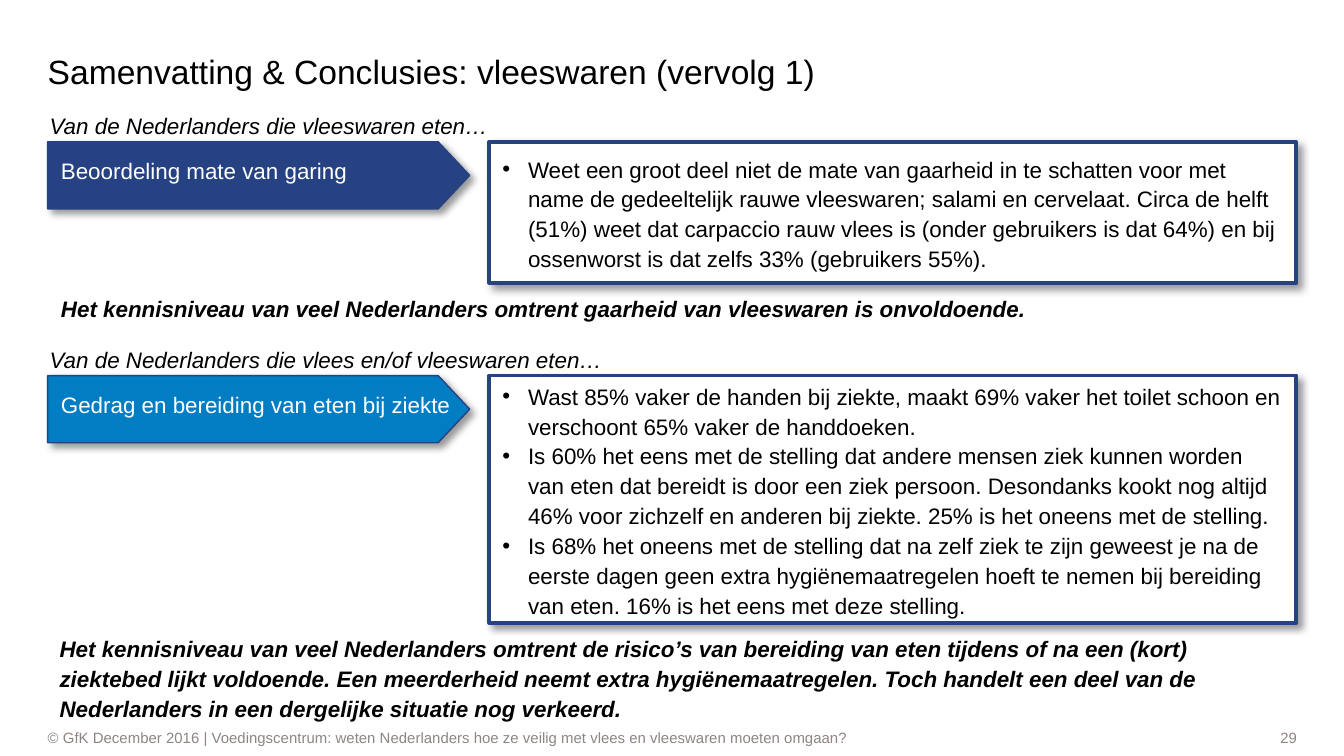
from lxml import etree
from pptx import Presentation
from pptx.dml.color import RGBColor
from pptx.enum.shapes import MSO_SHAPE
from pptx.enum.text import MSO_ANCHOR, PP_ALIGN
from pptx.oxml.ns import qn
from pptx.util import Pt

PX = 4572
RECT = MSO_SHAPE.RECTANGLE
TOP, MIDDLE = MSO_ANCHOR.TOP, MSO_ANCHOR.MIDDLE
LEFT, RIGHT = PP_ALIGN.LEFT, PP_ALIGN.RIGHT
COLORS = {"navy": "264283", "blue": "007DC3", "white": "FFFFFF",
          "black": "000000", "grey": "8E8581"}


def write(sp, *texts, size=12, color="black", bold=False, italic=False, align=LEFT,
          anchor=TOP, insets=(0, 0, 0, 0), spacing=None, bullet=False):
    tf = sp.text_frame
    tf.word_wrap = True
    tf.vertical_anchor = anchor
    tf.margin_left, tf.margin_top, tf.margin_right, tf.margin_bottom = [v * PX for v in insets]
    for i, text in enumerate(texts):
        p = tf.paragraphs[0] if i == 0 else tf.add_paragraph()
        p.alignment = align
        if spacing:
            p.line_spacing = Pt(spacing)
        if bullet:
            pPr = p._p.get_or_add_pPr()
            pPr.set("marL", str(38 * PX))
            pPr.set("indent", str(-38 * PX))
            etree.SubElement(pPr, qn("a:buFont")).set("typeface", "Arial")
            etree.SubElement(pPr, qn("a:buChar")).set("char", "•")
        r = p.add_run()
        r.text = text
        r.font.name = "Arial"
        r.font.size = Pt(size)
        r.font.bold = bold
        r.font.italic = italic
        r.font.color.rgb = RGBColor.from_string(COLORS[color])


def style(sp, fill, width):
    sp.fill.solid()
    sp.fill.fore_color.rgb = RGBColor.from_string(COLORS[fill])
    sp.line.color.rgb = RGBColor.from_string(COLORS["navy"])
    sp.line.width = Pt(width)
    sp.shadow.inherit = False
    effects = sp._element.spPr.find(qn("a:effectLst"))
    shadow = etree.SubElement(effects, qn("a:outerShdw"), blurRad=str(Pt(4)),
                              dist=str(Pt(3)), dir="2700000", algn="tl", rotWithShape="0")
    clr = etree.SubElement(shadow, qn("a:srgbClr"), val=COLORS["black"])
    etree.SubElement(clr, qn("a:alpha"), val="40000")


prs = Presentation()
prs.slide_width, prs.slide_height = 2000 * PX, 1125 * PX
s = prs.slides.add_slide(prs.slide_layouts[6])

SECTIONS = [
    dict(top=211, fill="navy", box_h=210, intro_w=740,
         intro="Van de Nederlanders die vleeswaren eten…",
         label="Beoordeling mate van garing",
         bullets=["Weet een groot deel niet de mate van gaarheid in te schatten voor met name de gedeeltelijk rauwe vleeswaren; salami en cervelaat. Circa de helft (51%) weet dat carpaccio rauw vlees is (onder gebruikers is dat 64%) en bij ossenworst is dat zelfs 33% (gebruikers 55%)."],
         conclusion="Het kennisniveau van veel Nederlanders omtrent gaarheid van vleeswaren is onvoldoende.",
         conclusion_at=(71, 425, 1858, 62)),
    dict(top=559, fill="blue", box_h=368, intro_w=832,
         intro="Van de Nederlanders die vlees en/of vleeswaren eten…",
         label="Gedrag en bereiding van eten bij ziekte",
         bullets=["Wast 85% vaker de handen bij ziekte, maakt 69% vaker het toilet schoon en verschoont 65% vaker de handdoeken.",
                  "Is 60% het eens met de stelling dat andere mensen ziek kunnen worden van eten dat bereidt is door een ziek persoon. Desondanks kookt nog altijd 46% voor zichzelf en anderen bij ziekte. 25% is het oneens met de stelling.",
                  "Is 68% het oneens met de stelling dat na zelf ziek te zijn geweest je na de eerste dagen geen extra hygiënemaatregelen hoeft te nemen bij bereiding van eten. 16% is het eens met deze stelling."],
         conclusion="Het kennisniveau van veel Nederlanders omtrent de risico’s van bereiding van eten tijdens of na een (kort) ziektebed lijkt voldoende. Een meerderheid neemt extra hygiënemaatregelen. Toch handelt een deel van de Nederlanders in een dergelijke situatie nog verkeerd.",
         conclusion_at=(69, 931, 1858, 154)),
]

title = s.shapes.add_textbox(71 * PX, 43 * PX, 1402 * PX, 126 * PX)
write(title, "Samenvatting & Conclusies: vleeswaren (vervolg 1)", size=18, anchor=MIDDLE)

for sec in SECTIONS:
    top = sec["top"]
    box = s.shapes.add_shape(RECT, 728 * PX, top * PX, 1201 * PX, sec["box_h"] * PX)
    style(box, "white", 2)
    write(box, *sec["bullets"], anchor=MIDDLE, insets=(20, 10, 20, 10), spacing=16, bullet=True)

    fb = s.shapes.build_freeform(71, top, scale=PX)
    fb.add_line_segments([(652, top), (699, top + 50), (652, top + 100), (71, top + 100)])
    arrow = fb.convert_to_shape()
    style(arrow, sec["fill"], 0.75)
    write(arrow, sec["label"], color="white", anchor=MIDDLE, insets=(20, 10, 20, 24))

    intro = s.shapes.add_textbox(74 * PX, (top - 44) * PX, sec["intro_w"] * PX, 40 * PX)
    write(intro, sec["intro"], italic=True)

    conclusion = s.shapes.add_textbox(*[v * PX for v in sec["conclusion_at"]])
    write(conclusion, sec["conclusion"], bold=True, italic=True,
          insets=(20, 10, 20, 10), spacing=16)

footer = s.shapes.add_textbox(71 * PX, 1082 * PX, 1544 * PX, 32 * PX)
write(footer, "© GfK December 2016 | Voedingscentrum: weten Nederlanders hoe ze veilig met vlees en vleeswaren moeten omgaan?",
      size=8, color="grey", anchor=MIDDLE)
number = s.shapes.add_textbox(1646 * PX, 1082 * PX, 284 * PX, 32 * PX)
write(number, "29", size=8, color="grey", align=RIGHT, anchor=MIDDLE)

prs.save("out.pptx")
